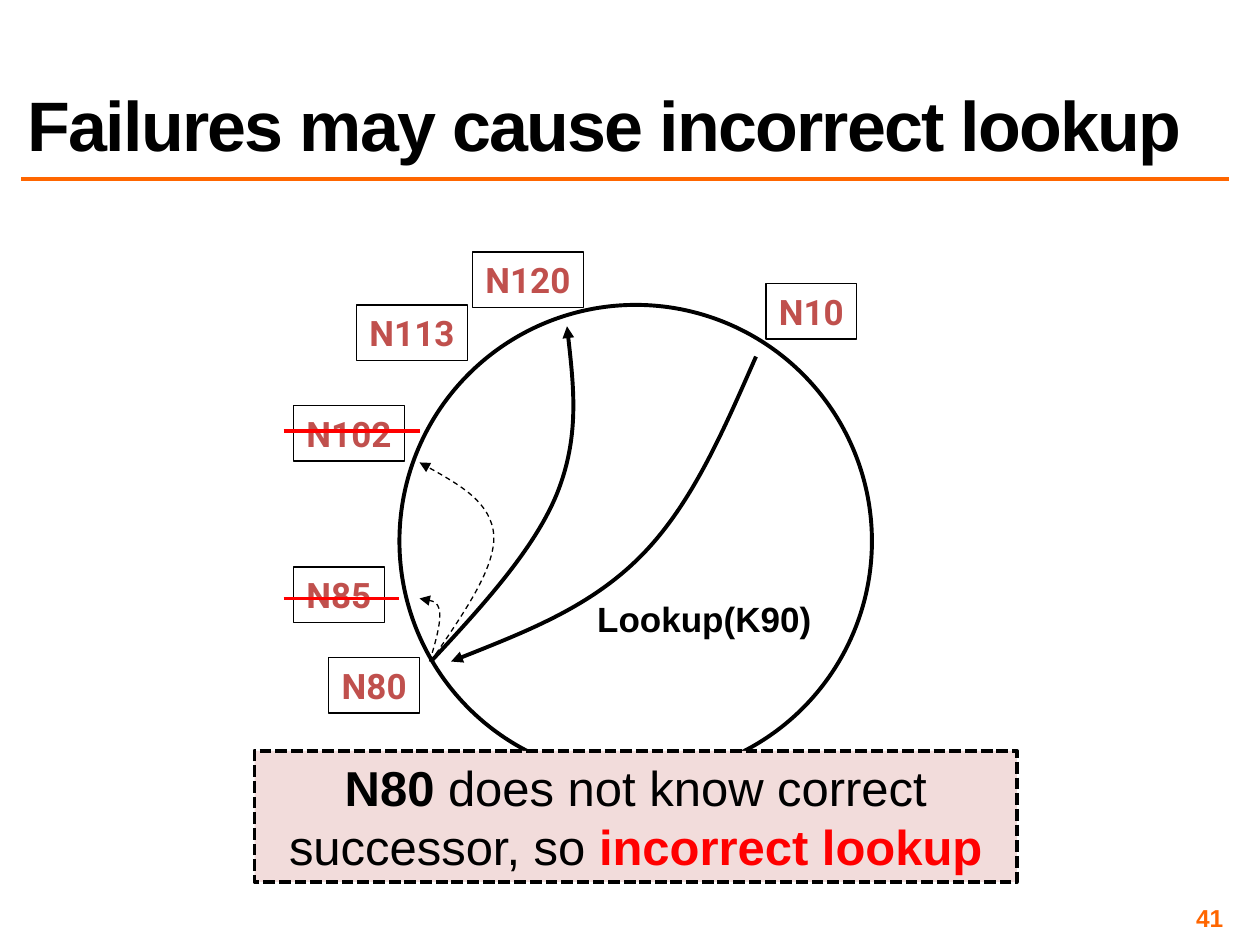
from typing import NamedTuple

from lxml.etree import SubElement
from pptx import Presentation
from pptx.dml.color import RGBColor
from pptx.enum.dml import MSO_LINE_DASH_STYLE as DASH
from pptx.enum.shapes import MSO_CONNECTOR, MSO_SHAPE
from pptx.enum.text import MSO_ANCHOR, MSO_AUTO_SIZE, PP_ALIGN
from pptx.oxml.ns import qn
from pptx.util import Inches, Pt

BLACK = RGBColor(0x00, 0x00, 0x00)
RED = RGBColor(0xFF, 0x00, 0x00)
ORANGE = RGBColor(0xFF, 0x66, 0x00)
NODE_RED = RGBColor(0xC0, 0x50, 0x4D)
PINK = RGBColor(0xF2, 0xDC, 0xDB)
THICK, THIN = 2.25, 0.75
BOX_HEIGHT = 0.44


class Node(NamedTuple):
    name: str
    left: float
    top: float


class Rule(NamedTuple):
    left: float
    right: float
    y: float
    color: RGBColor
    width: float


class Route(NamedTuple):
    """A start point, then two controls and an end point for each curve."""
    points: list[tuple[float, float]]
    failed: bool = False


NODES = [
    Node("N120", 3.75, 2.0),
    Node("N113", 2.83, 2.42),
    Node("N102", 2.33, 3.22),
    Node("N80", 2.61, 5.22),
    Node("N85", 2.33, 4.5),
    Node("N10", 6.08, 2.25),
]
TITLE_RULE = Rule(0.17, 9.75, 1.42, ORANGE, 2)
STRIKES = [
    Rule(2.25, 3.17, 4.75, RED, THICK),
    Rule(2.25, 3.33, 3.42, RED, THICK),
]
ROUTES = [
    Route([(3.41, 5.25), (3.46, 5.09), (3.5, 4.94), (3.49, 4.85),
           (3.47, 4.77), (3.4, 4.76), (3.33, 4.75)], failed=True),
    Route([(3.42, 5.25), (3.67, 4.88), (3.93, 4.52), (3.92, 4.25),
           (3.9, 3.99), (3.62, 3.83), (3.33, 3.67)], failed=True),
    Route([(3.42, 5.25), (3.83, 4.81), (4.24, 4.36), (4.42, 3.92),
           (4.6, 3.47), (4.55, 3.03), (4.5, 2.59)]),
    Route([(6.0, 2.83), (5.74, 3.42), (5.49, 4.01), (5.08, 4.42),
           (4.68, 4.82), (4.13, 5.03), (3.58, 5.25)]),
]


def style_run(r, size: float, color: RGBColor, bold: bool = True, font: str = "Arial") -> None:
    r.font.size = Pt(size)
    r.font.name = font
    r.font.bold = bold
    r.font.color.rgb = color


def style_outline(sp, width: float) -> None:
    sp.shadow.inherit = False
    sp.fill.background()
    sp.line.color.rgb = BLACK
    sp.line.width = Pt(width)


def add_outlined(slide, kind, left: float, top: float, width: float, height: float,
                 line_width: float):
    sp = slide.shapes.add_shape(kind, Inches(left), Inches(top), Inches(width), Inches(height))
    style_outline(sp, line_width)
    return sp


def add_text(slide, text: str, left: float, top: float, width: float, height: float):
    sp = slide.shapes.add_textbox(Inches(left), Inches(top), Inches(width), Inches(height))
    sp.text_frame.text = text
    return sp.text_frame


def add_node(slide, node: Node) -> None:
    width = 0.24 + 0.16 * len(node.name)
    sp = add_outlined(slide, MSO_SHAPE.RECTANGLE, node.left, node.top, width, BOX_HEIGHT, THIN)
    tf = sp.text_frame
    tf.text = node.name
    tf.word_wrap = False
    p = tf.paragraphs[0]
    p.alignment = PP_ALIGN.CENTER
    style_run(p.runs[0], 20, NODE_RED, font="Roboto")


def add_rule(slide, rule: Rule) -> None:
    y = Inches(rule.y)
    line = slide.shapes.add_connector(
        MSO_CONNECTOR.STRAIGHT, Inches(rule.left), y, Inches(rule.right), y)
    line.line.color.rgb = rule.color
    line.line.width = Pt(rule.width)
    SubElement(line._element.spPr, qn("a:effectLst"))


def add_route(slide, route: Route) -> None:
    """Draw the route as a freeform whose segments are joined into curves."""
    (x, y), *rest = route.points
    builder = slide.shapes.build_freeform(Inches(x), Inches(y))
    builder.add_line_segments([(Inches(a), Inches(b)) for a, b in rest], close=False)
    sp = builder.convert_to_shape()

    outline = next(sp._element.iter(qn("a:path")))
    segments = outline.findall(qn("a:lnTo"))
    for i in range(0, len(segments), 3):
        curve = SubElement(outline, qn("a:cubicBezTo"))
        for segment in segments[i:i + 3]:
            curve.append(segment[0])
            outline.remove(segment)

    style_outline(sp, THIN if route.failed else THICK)
    if route.failed:
        sp.line.dash_style = DASH.DASH
    SubElement(sp.line._get_or_add_ln(), qn("a:tailEnd"), type="triangle")


def add_title(slide) -> None:
    title = slide.shapes.title
    title.left, title.top, title.width, title.height = map(Inches, (0.12, 0.11, 9.62, 1.25))
    tf = title.text_frame
    tf.text = "Failures may cause incorrect lookup"
    tf.auto_size = MSO_AUTO_SIZE.NONE
    tf.vertical_anchor = MSO_ANCHOR.BOTTOM
    p = tf.paragraphs[0]
    p.alignment = PP_ALIGN.LEFT
    p.line_spacing = 0.8
    style_run(p.runs[0], 40, BLACK)
    p.runs[0]._r.get_or_add_rPr().set("spc", "-100")


def add_page_number(slide) -> None:
    tf = add_text(slide, "41", 7.42, 7.17, 2.33, 0.23)
    tf.margin_left = tf.margin_right = tf.margin_top = tf.margin_bottom = Inches(0.04)
    tf.vertical_anchor = MSO_ANCHOR.MIDDLE
    p = tf.paragraphs[0]
    p.alignment = PP_ALIGN.RIGHT
    style_run(p.runs[0], 14, ORANGE)


def add_callout(slide) -> None:
    sp = add_outlined(slide, MSO_SHAPE.RECTANGLE, 2.02, 5.96, 6.05, 1.04, THICK)
    sp.fill.solid()
    sp.fill.fore_color.rgb = PINK
    sp.line.dash_style = DASH.SQUARE_DOT
    sp.text_frame.word_wrap = True
    p = sp.text_frame.paragraphs[0]
    p.alignment = PP_ALIGN.CENTER
    for text, color, bold in [
        ("N80", BLACK, True),
        (" does not know correct successor, so ", BLACK, False),
        ("incorrect lookup", RED, True),
    ]:
        r = p.add_run()
        r.text = text
        style_run(r, 28, color, bold)


def add_lookup_label(slide) -> None:
    tf = add_text(slide, "Lookup(K90)", 4.63, 4.69, 1.92, BOX_HEIGHT)
    tf.word_wrap = False
    p = tf.paragraphs[0]
    p.alignment = PP_ALIGN.CENTER
    style_run(p.runs[0], 20, BLACK)


def main() -> None:
    prs = Presentation()
    prs.slide_width, prs.slide_height = Inches(10), Inches(7.5)
    slide = prs.slides.add_slide(prs.slide_layouts[5])
    add_title(slide)
    add_rule(slide, TITLE_RULE)
    add_page_number(slide)
    add_outlined(slide, MSO_SHAPE.OVAL, 3.17, 2.42, 3.75, 3.75, THICK)
    for node in NODES:
        add_node(slide, node)
    for strike in STRIKES:
        add_rule(slide, strike)
    for route in ROUTES:
        add_route(slide, route)
    add_callout(slide)
    add_lookup_label(slide)
    prs.save("out.pptx")


if __name__ == "__main__":
    main()
